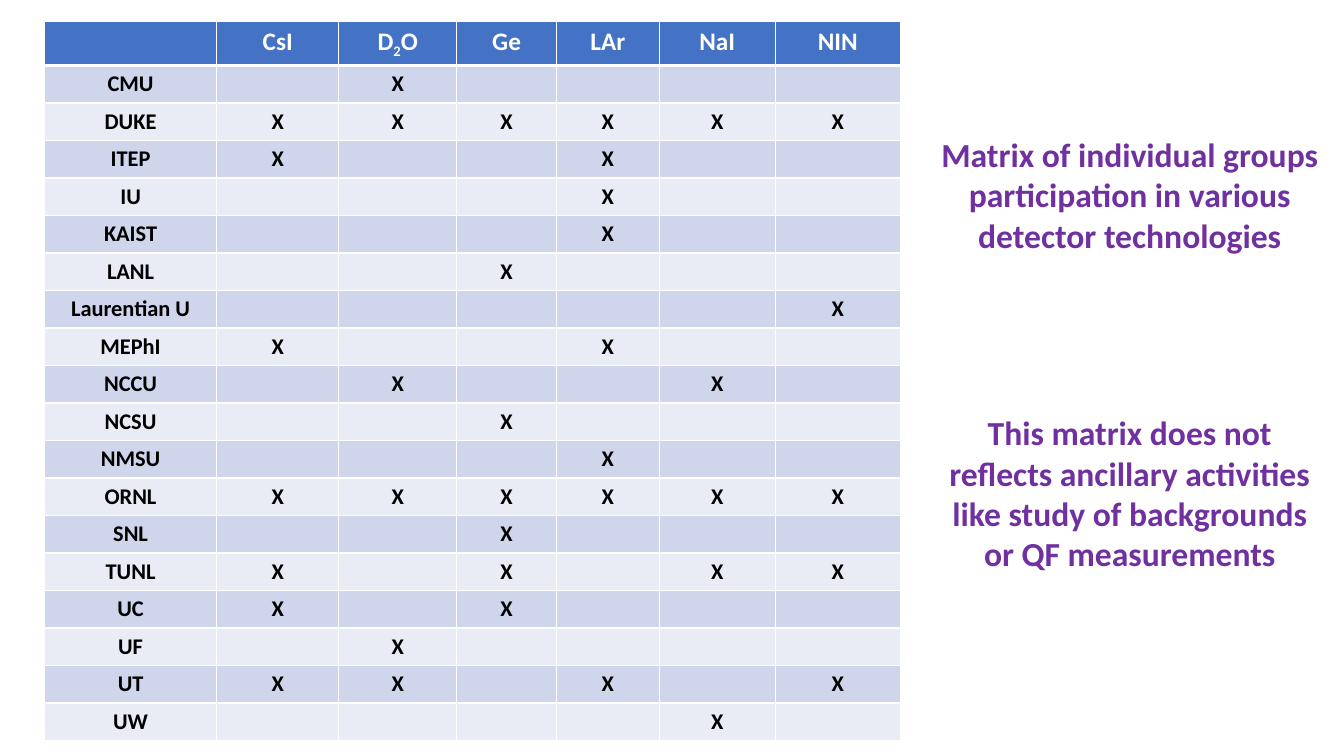
from lxml import etree
from pptx import Presentation
from pptx.dml.color import RGBColor
from pptx.enum.text import MSO_AUTO_SIZE, PP_ALIGN
from pptx.oxml.ns import qn
from pptx.util import Inches, Pt

CENTER = PP_ALIGN.CENTER
GROW = MSO_AUTO_SIZE.SHAPE_TO_FIT_TEXT
COLORS = {
    "header": "4472C4",
    "band_dark": "CFD5EA",
    "band_light": "E9EBF5",
    "white": "FFFFFF",
    "black": "000000",
    "purple": "7030A0",
}
DETECTORS = ["CsI", "D|2|O", "Ge", "LAr", "NaI", "NIN"]
GROUPS = {
    "CMU": [2],
    "DUKE": [1, 2, 3, 4, 5, 6],
    "ITEP": [1, 4],
    "IU": [4],
    "KAIST": [4],
    "LANL": [3],
    "Laurentian U": [6],
    "MEPhI": [1, 4],
    "NCCU": [2, 5],
    "NCSU": [3],
    "NMSU": [4],
    "ORNL": [1, 2, 3, 4, 5, 6],
    "SNL": [3],
    "TUNL": [1, 3, 5, 6],
    "UC": [1, 3],
    "UF": [2],
    "UT": [1, 2, 4, 6],
    "UW": [5],
}
COL_WIDTHS = [1.71, 1.21, 1.17, 0.99, 1.02, 1.15, 1.24]
ROW_HEIGHT = 0.35
NOTES = [
    (1.28, 1.31, "Matrix of individual groups participation in various detector technologies"),
    (4.04, 1.72, "This matrix does not reflects ancillary activities "
                 "like study of backgrounds or QF measurements"),
]


def write(tf, text, size=16, color="black"):
    p = tf.paragraphs[0]
    p.alignment = CENTER
    if not text:
        etree.SubElement(p._p, qn("a:endParaRPr"), sz=str(size * 100))
        return
    for i, part in enumerate(text.split("|")):
        r = p.add_run()
        r.text = part
        r.font.name = "Calibri"
        r.font.size = Pt(size)
        r.font.bold = True
        r.font.color.rgb = RGBColor.from_string(COLORS[color])
        if i % 2:
            r.font._element.set("baseline", "-25000")


def add_borders(cell, bottom, top):
    tcPr = cell._tc.get_or_add_tcPr()
    for side, width in (("lnL", 1), ("lnR", 1), ("lnT", top), ("lnB", bottom)):
        ln = etree.SubElement(tcPr, qn("a:" + side), w=str(Pt(width)))
        fill = etree.SubElement(ln, qn("a:solidFill"))
        etree.SubElement(fill, qn("a:srgbClr"), val=COLORS["white"])


prs = Presentation()
prs.slide_width = Inches(13.33)
prs.slide_height = Inches(7.5)
s = prs.slides.add_slide(prs.slide_layouts[6])

rows = [[""] + DETECTORS]
for group, marks in GROUPS.items():
    rows.append([group] + ["X" if c in marks else "" for c in range(1, len(COL_WIDTHS))])

table = s.shapes.add_table(
    len(rows), len(COL_WIDTHS), Inches(0.44), Inches(0.21),
    Inches(sum(COL_WIDTHS)), Inches(ROW_HEIGHT * len(rows)),
).table
for col, width in zip(table.columns, COL_WIDTHS):
    col.width = Inches(width)

for y, row in enumerate(rows):
    table.rows[y].height = Inches(ROW_HEIGHT)
    band = "header" if y == 0 else "band_dark" if y % 2 else "band_light"
    for x, text in enumerate(row):
        cell = table.cell(y, x)
        add_borders(cell, bottom=3 if y == 0 else 1, top=3 if y == 1 else 1)
        cell.fill.solid()
        cell.fill.fore_color.rgb = RGBColor.from_string(COLORS[band])
        if y == 0:
            write(cell.text_frame, text, size=18, color="white")
        else:
            write(cell.text_frame, text)

for top, height, text in NOTES:
    tf = s.shapes.add_textbox(Inches(9.21), Inches(top), Inches(3.99), Inches(height)).text_frame
    tf.word_wrap = True
    tf.auto_size = GROW
    write(tf, text, size=24, color="purple")

prs.save("out.pptx")
